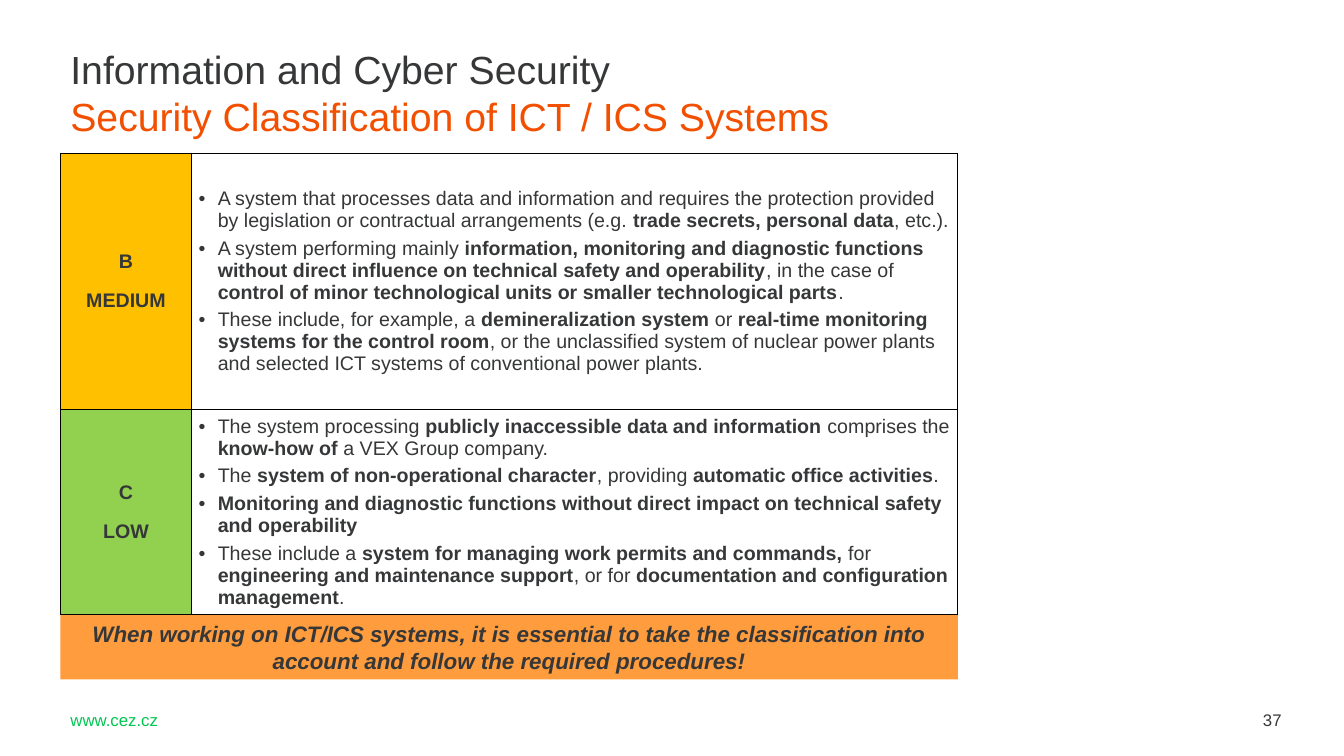
from lxml import etree
from pptx import Presentation
from pptx.dml.color import RGBColor
from pptx.enum.shapes import MSO_SHAPE
from pptx.enum.text import MSO_ANCHOR, PP_ALIGN
from pptx.oxml.ns import qn
from pptx.util import Pt

RECT = MSO_SHAPE.RECTANGLE
LEFT, CENTER, RIGHT = PP_ALIGN.LEFT, PP_ALIGN.CENTER, PP_ALIGN.RIGHT
TOP, MIDDLE, BOTTOM = MSO_ANCHOR.TOP, MSO_ANCHOR.MIDDLE, MSO_ANCHOR.BOTTOM
SCALE = 9144
DARK, ORANGE, GREEN = "363738", "F24F00", "00C752"
BAND, WHITE, BLACK = "FF9C3D", "FFFFFF", "000000"

LEVELS = [
    ("FFC000", ["B", "MEDIUM"], [
        "A system that processes data and information and requires the protection provided by "
        "legislation or contractual arrangements (e.g. **trade secrets, personal data**, etc.).",
        "A system performing mainly **information, monitoring and diagnostic functions without "
        "direct influence on technical safety and operability**, in the case of **control of "
        "minor technological units or smaller technological parts**.",
        "These include, for example, a **demineralization system **or** real-time monitoring "
        "systems for the control room**, or the unclassified system of nuclear power plants and "
        "selected ICT systems of conventional power plants.",
    ]),
    ("92D050", ["C", "LOW"], [
        "The system processing **publicly inaccessible data and information** comprises the "
        "**know-how of **a VEX Group company.",
        "The **system of non-operational character**, providing **automatic office activities**.",
        "**Monitoring and diagnostic functions without direct impact on technical safety and "
        "operability**",
        "These include a **system for managing work permits and commands, **for** engineering and "
        "maintenance support**, or for** documentation and configuration management**.",
    ]),
]


def px(n):
    return int(n * SCALE)


def color(code):
    return RGBColor.from_string(code)


def add_run(para, text, size, code=DARK, **style):
    run = para.add_run()
    run.text = text
    look = {"name": "Arial", "size": Pt(size), "bold": False, **style}
    for key, value in look.items():
        setattr(run.font, key, value)
    run.font.color.rgb = color(code)


def add_text(slide, box, anchor=TOP, align=LEFT):
    frame = slide.shapes.add_textbox(*map(px, box)).text_frame
    frame.word_wrap = True
    frame.vertical_anchor = anchor
    para = frame.paragraphs[0]
    para.alignment = align
    return para


def draw_title(slide, box):
    para = add_text(slide, box, BOTTOM)
    add_run(para, "Information and Cyber Security", 28)
    para.add_line_break()
    add_run(para, "Security Classification of ICT / ICS Systems", 28, ORANGE)


def draw_band(slide, box):
    band = slide.shapes.add_shape(RECT, *map(px, box))
    band.shadow.inherit = False
    band.fill.solid()
    band.fill.fore_color.rgb = color(BAND)
    band.line.fill.background()
    frame = band.text_frame
    frame.word_wrap = True
    frame.vertical_anchor = MIDDLE
    para = frame.paragraphs[0]
    para.alignment = CENTER
    add_run(para, "When working on ICT/ICS systems, it is essential to take the classification "
            "into account and follow the required procedures!", 16, bold=True, italic=True)


def draw_foot(slide, box):
    left, top, width, height = box
    add_run(add_text(slide, (left, top, 181, height)), "www.cez.cz", 12, GREEN)
    page = (left + width - 110, top, 110, height)
    add_run(add_text(slide, page, align=RIGHT), "37", 12)


def set_edges(cell):
    props = cell._tc.get_or_add_tcPr()
    for spot, side in enumerate(("lnL", "lnR", "lnT", "lnB")):
        line = etree.Element(qn("a:" + side), w=str(Pt(1)))
        fill = etree.SubElement(line, qn("a:solidFill"))
        etree.SubElement(fill, qn("a:srgbClr"), val=BLACK)
        props.insert(spot, line)


def add_bullet(para):
    props = para._p.get_or_add_pPr()
    props.set("marL", str(px(19)))
    props.set("indent", str(px(-19)))
    etree.SubElement(props, qn("a:buFont"), typeface="Arial")
    etree.SubElement(props, qn("a:buChar"), char="•")


def fill_cell(cell, lines, code, listed):
    look = {"vertical_anchor": MIDDLE, "margin_left": px(7), "margin_right": px(7),
            "margin_top": 0, "margin_bottom": 0}
    for key, value in look.items():
        setattr(cell, key, value)
    cell.fill.solid()
    cell.fill.fore_color.rgb = color(code)
    set_edges(cell)
    frame = cell.text_frame
    for row, line in enumerate(lines):
        para = frame.add_paragraph() if row else frame.paragraphs[0]
        para.alignment = LEFT if listed else CENTER
        if listed:
            add_bullet(para)
        if row:
            para.space_before = Pt(4 if listed else 12)
        for turn, part in enumerate(line.split("**")):
            if part:
                add_run(para, part, 14, bold=not listed or turn % 2 == 1)


def draw_table(slide, box):
    table = slide.shapes.add_table(len(LEVELS), 2, *map(px, box)).table
    table.first_row = table.horz_banding = False
    for col, width in zip(table.columns, (130, box[2] - 130)):
        col.width = px(width)
    for row, height in zip(table.rows, (254, box[3] - 254)):
        row.height = px(height)
    for row, (code, name, points) in enumerate(LEVELS):
        fill_cell(table.cell(row, 0), name, code, False)
        fill_cell(table.cell(row, 1), points, WHITE, True)


def main():
    deck = Presentation()
    deck.slide_width, deck.slide_height = px(1333), px(750)
    slide = deck.slides.add_slide(deck.slide_layouts[6])
    draw_foot(slide, (60, 699, 1221, 30))
    draw_title(slide, (60, 39, 1126, 104))
    draw_band(slide, (60, 610, 890, 64))
    draw_table(slide, (60, 152, 890, 457))
    deck.save("out.pptx")


if __name__ == "__main__":
    main()
